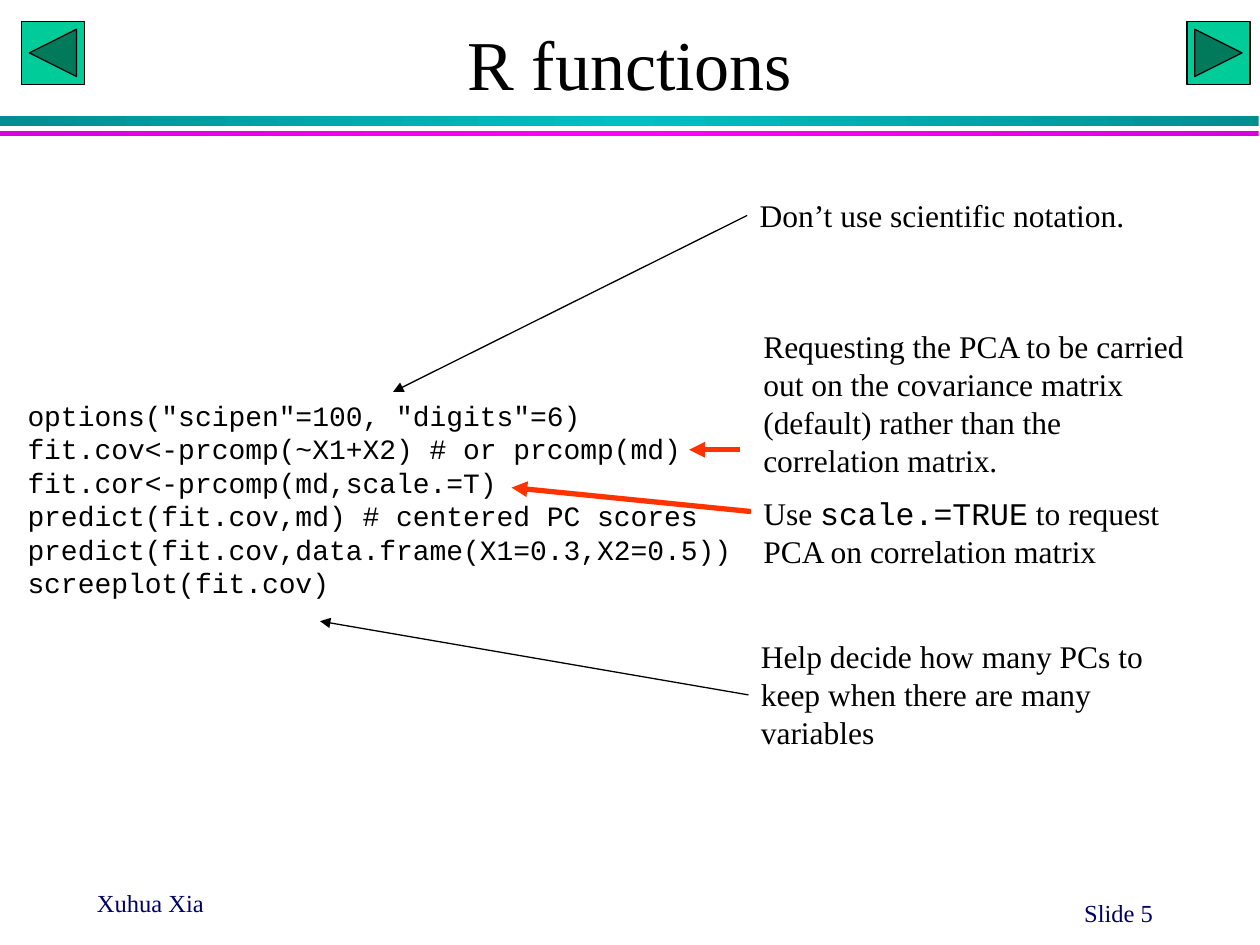
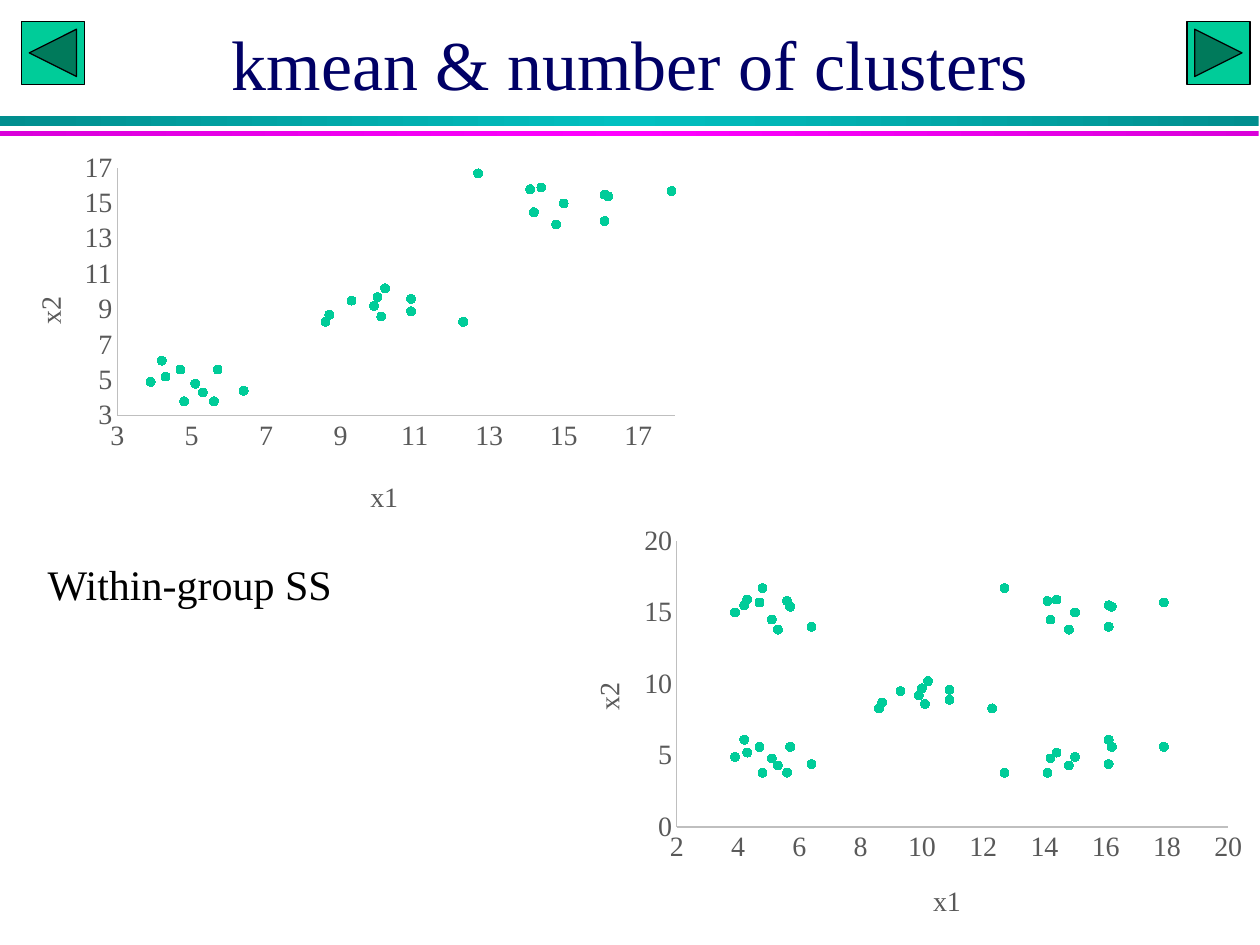
from copy import deepcopy

from lxml import etree
from pptx import Presentation
from pptx.chart.data import XyChartData
from pptx.dml.color import RGBColor
from pptx.enum.chart import XL_CHART_TYPE, XL_MARKER_STYLE, XL_TICK_MARK
from pptx.enum.shapes import MSO_CONNECTOR, MSO_SHAPE
from pptx.enum.text import MSO_ANCHOR, PP_ALIGN
from pptx.oxml.ns import qn
from pptx.util import Inches, Pt

SCATTER = XL_CHART_TYPE.XY_SCATTER
CIRCLE = XL_MARKER_STYLE.CIRCLE
NO_TICK = XL_TICK_MARK.NONE
STRAIGHT = MSO_CONNECTOR.STRAIGHT
RECTANGLE = MSO_SHAPE.RECTANGLE
BACK = MSO_SHAPE.ACTION_BUTTON_BACK_OR_PREVIOUS
FORWARD = MSO_SHAPE.ACTION_BUTTON_FORWARD_OR_NEXT
TOP, MIDDLE = MSO_ANCHOR.TOP, MSO_ANCHOR.MIDDLE
LEFT, CENTER, RIGHT = PP_ALIGN.LEFT, PP_ALIGN.CENTER, PP_ALIGN.RIGHT
LEFT_SIDE = 1

COLORS = {name: RGBColor.from_string(value) for name, value in {
    "black": "000000",
    "navy": "000066",
    "green": "00CC99",
    "red": "FF3300",
    "axis_text": "595959",
    "axis_line": "BFBFBF",
    "teal_edge": "008E8E",
    "teal_middle": "00C0C0",
    "magenta_edge": "DA00DA",
    "magenta_middle": "FF00FF",
}.items()}
SERIF = "Times New Roman"
MONO = "Courier New"


def add_text(slide, box, paragraphs, size, color="black", align=LEFT,
             anchor=TOP, space_before=0):
    """Add a text box; each paragraph is a list of (text, font name) runs."""
    text_box = slide.shapes.add_textbox(*map(Inches, box))
    frame = text_box.text_frame
    frame.word_wrap = True
    frame.vertical_anchor = anchor
    for index, runs in enumerate(paragraphs):
        paragraph = frame.add_paragraph() if index else frame.paragraphs[0]
        paragraph.alignment = align
        paragraph.space_before = Pt(space_before if index else 0)
        for text, font_name in runs:
            run = paragraph.add_run()
            run.text = text
            run.font.name = font_name
            run.font.size = Pt(size)
            run.font.color.rgb = COLORS[color]
    return text_box


def place(parent, position, **settings):
    """Give a chart part a manual layout, in fractions of the chart."""
    for old_layout in parent.findall(qn("c:layout")):
        parent.remove(old_layout)
    layout = etree.Element(qn("c:layout"))
    manual = etree.SubElement(layout, qn("c:manualLayout"))
    for tag, value in {**settings, "xMode": "edge", "yMode": "edge", **position}.items():
        etree.SubElement(manual, qn("c:" + tag)).set("val", str(value))
    title_text = parent.find(qn("c:tx"))
    if title_text is None:
        parent.insert(0, layout)
    else:
        title_text.addnext(layout)


presentation = Presentation()
presentation.slide_width = Inches(10)
presentation.slide_height = Inches(7.5)
blank_layout = presentation.slide_layouts[6]

# Shared bands, navigation buttons and title
slides = []
for title, title_color in [("R functions", "black"),
                           ("kmean & number of clusters", "navy")]:
    slide = presentation.slides.add_slide(blank_layout)
    slides.append(slide)
    for top, height, hue in [(0.92, 0.08, "teal"), (1.04, 0.04, "magenta")]:
        band = slide.shapes.add_shape(
            RECTANGLE, 0, Inches(top), Inches(9.99), Inches(height))
        band.shadow.inherit = False
        band.line.fill.background()
        band.fill.gradient()
        band.fill.gradient_angle = 0
        first, last = band.fill.gradient_stops
        first.position, last.position = 0, 1
        first.color.rgb = last.color.rgb = COLORS[hue + "_edge"]
        stop_list = band._element.spPr.find(".//" + qn("a:gsLst"))
        stop_list.insert(1, deepcopy(stop_list[0]))
        middle = band.fill.gradient_stops[1]
        middle.position = 0.5
        middle.color.rgb = COLORS[hue + "_middle"]
    for kind, left in [(BACK, 0.17), (FORWARD, 9.42)]:
        button = slide.shapes.add_shape(
            kind, Inches(left), Inches(0.17), Inches(0.5), Inches(0.5))
        button.shadow.inherit = False
        button.fill.solid()
        button.fill.fore_color.rgb = COLORS["green"]
        button.line.color.rgb = COLORS["black"]
        button.line.width = Pt(0.75)
    add_text(slide, (0.75, 0, 8.5, 1), [[(title, SERIF)]], 40, title_color,
             CENTER, MIDDLE)

code_slide, cluster_slide = slides

# Slide 1: commented R code
add_text(code_slide, (0.67, 7, 2.08, 0.25), [[("Xuhua Xia", SERIF)]], 14, "navy")
add_text(code_slide, (7.17, 7.08, 2.08, 0.25), [[("Slide 5", SERIF)]], 14, "navy", RIGHT)

code_lines = [
    'options("scipen"=100, "digits"=6)',
    "fit.cov<-prcomp(~X1+X2) # or prcomp(md)",
    "fit.cor<-prcomp(md,scale.=T)",
    "predict(fit.cov,md) # centered PC scores",
    "predict(fit.cov,data.frame(X1=0.3,X2=0.5))",
    "screeplot(fit.cov)",
]
add_text(code_slide, (0.12, 3.11, 6.01, 1.72),
         [[(line, MONO)] for line in code_lines], 16)
add_text(code_slide, (5.96, 2.55, 3.67, 2.07), [
    [("Requesting the PCA to be carried out on the covariance matrix "
      "(default) rather than the correlation matrix.", SERIF)],
    [("Use ", SERIF), ("scale.=TRUE", MONO),
     (" to request PCA on correlation matrix", SERIF)],
], 18, space_before=9)
screeplot_note = add_text(code_slide, (5.94, 5.01, 3.31, 1.01), [
    [("Help decide how many PCs to keep when there are many variables", SERIF)]], 18)
notation_note = add_text(code_slide, (5.93, 1.51, 3.31, 0.4), [
    [("Don’t use scientific notation.", SERIF)]], 18)

for start, end, color, width, note in [
    ((5.87, 3.57), (5.47, 3.57), "red", 3, None),
    ((5.94, 5.51), (2.54, 4.93), "black", 0.75, screeplot_note),
    ((5.93, 1.71), (3.12, 3.11), "black", 0.75, notation_note),
    ((5.96, 4.06), (4.06, 3.87), "red", 3, None),
]:
    arrow = code_slide.shapes.add_connector(STRAIGHT, *map(Inches, start + end))
    if note is not None:
        arrow.begin_connect(note, LEFT_SIDE)
    arrow.line.color.rgb = COLORS[color]
    arrow.line.width = Pt(width)
    etree.SubElement(arrow.line._get_or_add_ln(), qn("a:tailEnd")).set("type", "triangle")
    etree.SubElement(arrow._element.spPr, qn("a:effectLst"))

# Slide 2: scatter charts built from clusters of ten points
add_text(cluster_slide, (0.28, 4.38, 4.02, 0.5), [[("Within-group SS", SERIF)]], 24)

low_x = [3.9, 6.4, 4.8, 5.1, 5.6, 4.7, 4.3, 4.2, 5.7, 5.3]
low_y = [4.9, 4.4, 3.8, 4.8, 3.8, 5.6, 5.2, 6.1, 5.6, 4.3]
middle_x = [8.6, 10, 10.9, 10.1, 12.3, 10.9, 10.2, 9.3, 8.7, 9.9]
middle_y = [8.3, 9.7, 8.9, 8.6, 8.3, 9.6, 10.2, 9.5, 8.7, 9.2]
high_x = [15, 16.1, 12.7, 14.2, 14.1, 17.9, 14.4, 16.1, 16.2, 14.8]
high_y = [15, 14, 16.7, 14.5, 15.8, 15.7, 15.9, 15.5, 15.4, 13.8]
three_clusters = [(low_x, low_y), (middle_x, middle_y), (high_x, high_y)]
five_clusters = three_clusters + [(low_x, high_y), (high_x, low_y)]

# Each scale is minimum, maximum, major unit
for box, clusters, x_scale, y_scale, plot_size in [
    ((0, 1.15, 5.47, 3.07), three_clusters, (3, 18, 2), (3, 17, 2), (0.81, 0.64)),
    ((4.43, 4.09, 5.54, 3.39), five_clusters, (2, 20, 2), (0, 20, 5), (0.79, 0.67)),
]:
    chart_data = XyChartData()
    points = chart_data.add_series("Series 1")
    for xs, ys in clusters:
        for x, y in zip(xs, ys):
            points.add_data_point(x, y)
    chart = cluster_slide.shapes.add_chart(SCATTER, *map(Inches, box), chart_data).chart
    chart.has_legend = False
    chart.has_title = False
    chart.font.name = SERIF
    chart.font.size = Pt(16)
    chart.font.color.rgb = COLORS["black"]
    plot = chart.plots[0]
    plot.vary_by_categories = False
    series = plot.series[0]
    series.format.line.fill.background()
    series.marker.style = CIRCLE
    series.marker.size = 5
    series.marker.format.fill.solid()
    series.marker.format.fill.fore_color.rgb = COLORS["green"]
    series.marker.format.line.color.rgb = COLORS["green"]

    for axis, name, scale, title_at in [
        (chart.category_axis, "x1", x_scale, {"x": 0.53, "y": 0.85}),
        (chart.value_axis, "x2", y_scale, {"x": 0.04, "y": 0.38}),
    ]:
        axis.minimum_scale, axis.maximum_scale, axis.major_unit = scale
        axis.has_major_gridlines = False
        axis.major_tick_mark = axis.minor_tick_mark = NO_TICK
        axis.format.line.color.rgb = COLORS["axis_line"]
        axis.format.line.width = Pt(0.75)
        run = axis.axis_title.text_frame.paragraphs[0].add_run()
        run.text = name
        for font in (axis.tick_labels.font, run.font):
            font.name = SERIF
            font.size = Pt(16)
            font.bold = False
            font.color.rgb = COLORS["axis_text"]
        place(axis.axis_title._element, title_at)
    plot_width, plot_height = plot_size
    place(chart._chartSpace.chart.plotArea,
          {"x": 0.17, "y": 0.06, "w": plot_width, "h": plot_height},
          layoutTarget="inner")

presentation.save("out.pptx")
